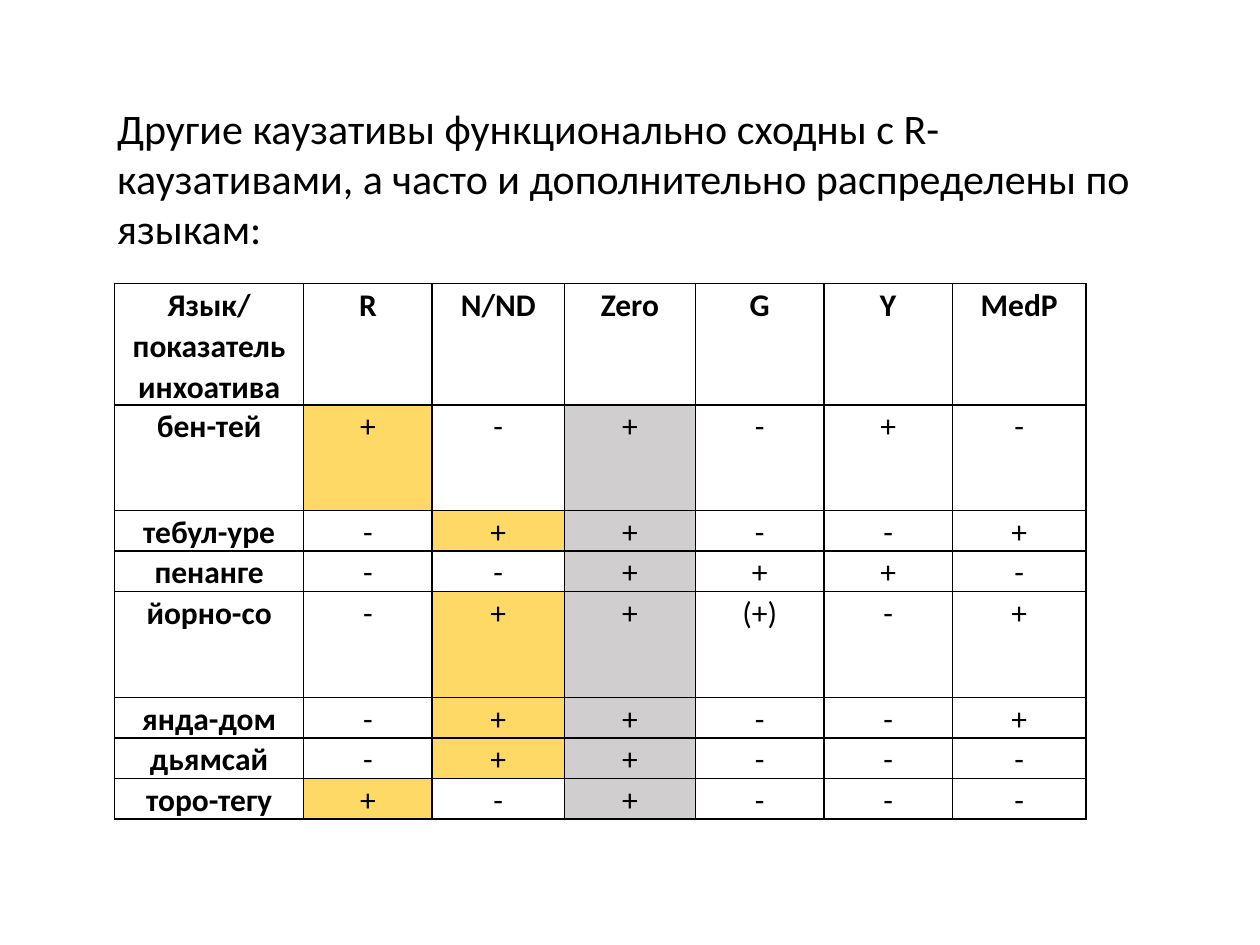
from lxml.etree import SubElement
from pptx import Presentation
from pptx.dml.color import RGBColor
from pptx.enum.text import MSO_ANCHOR, MSO_AUTO_SIZE, PP_ALIGN
from pptx.oxml.ns import qn
from pptx.util import Inches, Pt

# Content
TITLE = ("Другие каузативы функционально сходны с R-каузативами, "
         "а часто и дополнительно распределены по языкам:")
HEADER = ["Язык/показатель инхоатива", "R", "N/ND", "Zero", "G", "Y", "MedP"]
LANGUAGES = [
    ["бен-тей", "+", "-", "+", "-", "+", "-"],
    ["тебул-уре", "-", "+", "+", "-", "-", "+"],
    ["пенанге", "-", "-", "+", "+", "+", "-"],
    ["йорно-со", "-", "+", "+", "(+)", "-", "+"],
    ["янда-дом", "-", "+", "+", "-", "-", "+"],
    ["дьямсай", "-", "+", "+", "-", "-", "-"],
    ["торо-тегу", "+", "-", "+", "-", "-", "-"],
]
COLUMN_WIDTHS = [1.5, 1.02, 1.05, 1.04, 1.02, 1.02, 1.06]
ROW_HEIGHTS = [0.56, 0.84, 0.28, 0.28, 0.84, 0.28, 0.28, 0.28]
PLUS_FILLS = {"R": "FFD966", "N/ND": "FFD966", "Zero": "D0CECE"}
FONT, BLACK = "Calibri", "000000"


def color(value):
    return RGBColor.from_string(value)


def style_font(font, size, bold):
    font.name, font.size, font.bold = FONT, Pt(size), bold
    font.color.rgb = color(BLACK)


def add_borders(cell):
    properties = cell._tc.get_or_add_tcPr()
    for position, side in enumerate(("lnL", "lnR", "lnT", "lnB")):
        line = SubElement(properties, qn(f"a:{side}"), w=str(Pt(1)))
        fill = SubElement(line, qn("a:solidFill"))
        SubElement(fill, qn("a:srgbClr"), val=BLACK)
        properties.insert(position, line)  # borders come before the fill


def fill_cell(cell, text, bold, fill):
    cell.text = text
    cell.margin_left = cell.margin_right = Inches(0.07)
    cell.margin_top = cell.margin_bottom = 0
    paragraph = cell.text_frame.paragraphs[0]
    paragraph.alignment = PP_ALIGN.CENTER
    paragraph.line_spacing = 1.07
    style_font(paragraph.font, 18, bold)
    if fill:
        cell.fill.solid()
        cell.fill.fore_color.rgb = color(fill)
    else:
        cell.fill.background()
    add_borders(cell)


presentation = Presentation()
presentation.slide_width, presentation.slide_height = Inches(10), Inches(7.5)
slide = presentation.slides.add_slide(presentation.slide_layouts[5])

# Title
title = slide.shapes.title
title.left, title.top = Inches(0.83), Inches(0.76)
title.width, title.height = Inches(8.43), Inches(1.31)
frame = title.text_frame
frame.text = TITLE
frame.word_wrap = True
frame.auto_size = MSO_AUTO_SIZE.SHAPE_TO_FIT_TEXT
frame.vertical_anchor = MSO_ANCHOR.TOP
frame.paragraphs[0].alignment = PP_ALIGN.LEFT
style_font(frame.paragraphs[0].font, 24, False)

# Table of languages and markers
rows = [HEADER] + LANGUAGES
table = slide.shapes.add_table(
    len(rows), len(HEADER), Inches(0.91), Inches(2.25),
    Inches(sum(COLUMN_WIDTHS)), Inches(sum(ROW_HEIGHTS))).table
for column, width in zip(table.columns, COLUMN_WIDTHS):
    column.width = Inches(width)
for row, height in zip(table.rows, ROW_HEIGHTS):
    row.height = Inches(height)
for r, values in enumerate(rows):
    for c, text in enumerate(values):
        fill = PLUS_FILLS.get(HEADER[c]) if text == "+" else None
        fill_cell(table.cell(r, c), text, r == 0 or c == 0, fill)

presentation.save("out.pptx")
